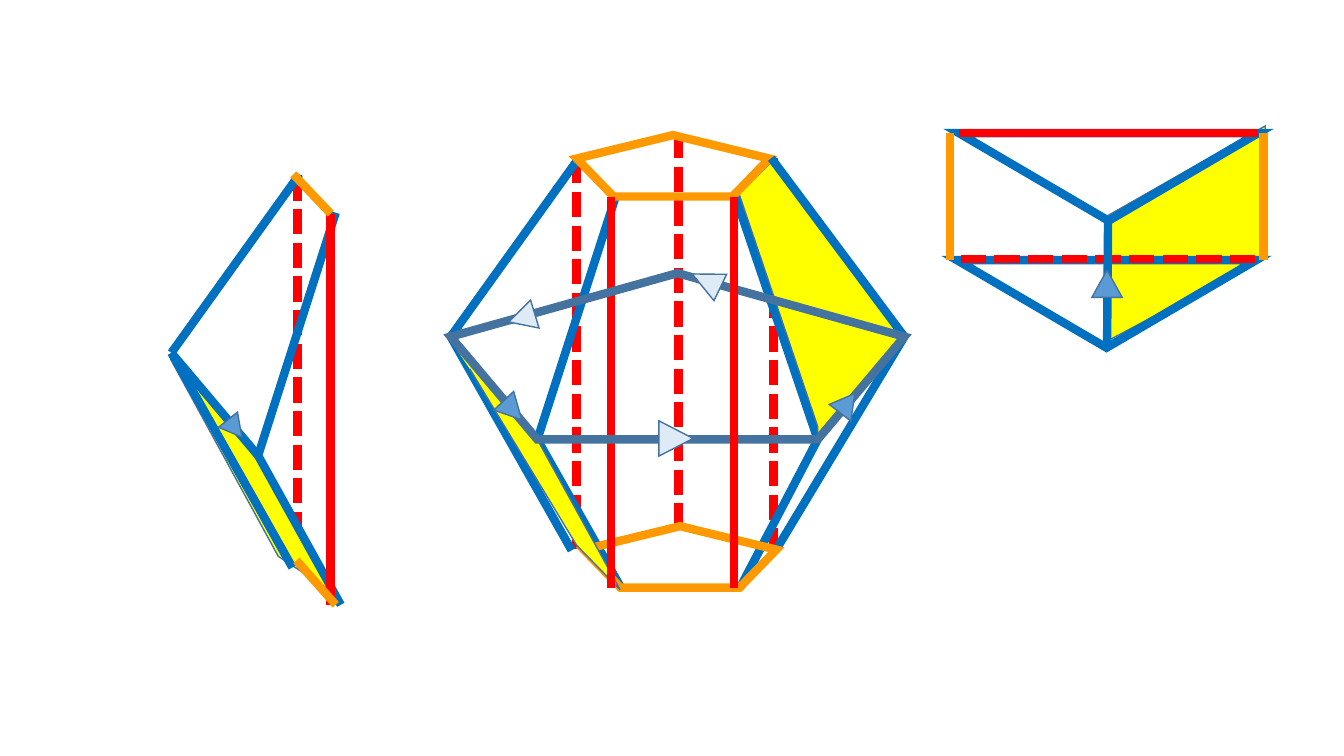
from lxml import etree
from pptx import Presentation
from pptx.dml.color import RGBColor
from pptx.enum.dml import MSO_LINE
from pptx.enum.shapes import MSO_CONNECTOR, MSO_SHAPE
from pptx.oxml.ns import qn
from pptx.util import Inches, Pt

STRAIGHT = MSO_CONNECTOR.STRAIGHT
TRIANGLE = MSO_SHAPE.ISOSCELES_TRIANGLE
PENTAGON = MSO_SHAPE.REGULAR_PENTAGON
DASHED = MSO_LINE.SQUARE_DOT

COLORS = {
    "red": "FF0000", "blue": "0070C0", "orange": "FF9900", "yellow": "FFFF00",
    "steel": "43739E", "front": "5B9BD5", "back": "DEEBF7",
}
EDGE_WIDTH = 6
OUTLINE_WIDTH = 1
POST_HEIGHT = 3.88

# Yellow faces: corner points, closed or open outline
PRISM_FACE = [(10.96, 2.32), (10.97, 3.39), (12.56, 2.55), (12.55, 1.25), (10.97, 2.15)], False
WEDGE_FACE = [(1.69, 3.56), (2.58, 4.51), (3.34, 5.9), (2.76, 5.52)], True
GEM_RIGHT_FACE = [(7.33, 1.92), (8.11, 4.23), (8.11, 4.31), (8.97, 3.3), (7.67, 1.59)], True
GEM_LEFT_FACE = [(4.49, 3.41), (5.34, 4.38), (6.15, 5.85), (5.72, 5.41), (4.66, 3.66)], False

# Posts: left, top
HIDDEN_POSTS = [(7.67, 1.57), (5.72, 1.57), (2.95, 1.74)]
GEM_AXIS = 6.73, 1.32
WEDGE_POST = 3.28, 2.12
GEM_LEFT_POST = 6.06, 1.95
GEM_RIGHT_POST = 7.28, 1.95

# Edges: start x, start y, end x, end y
GEM_FRONT_EDGES = [
    (5.74, 1.57, 4.47, 3.34), (6.11, 1.94, 5.33, 4.36),
    (7.29, 1.94, 8.11, 4.36), (5.33, 4.36, 6.16, 5.83),
]
LOWER_AND_WEDGE_EDGES = [
    (8.11, 4.36, 7.34, 5.83), (8.97, 3.34, 7.7, 5.45), (4.47, 3.34, 5.67, 5.46),
    (2.97, 1.73, 1.7, 3.5), (3.33, 2.11, 2.56, 4.52),
    (2.56, 4.52, 3.38, 6), (1.7, 3.5, 2.9, 5.63),
]
WEDGE_GIRDLE = 1.7, 3.5, 2.56, 4.52
WEDGE_CAPS = [(2.91, 1.73, 3.28, 2.12), (2.94, 5.56, 3.33, 6)]
PRISM_RIGHT = 12.53, 1.32, 12.53, 2.58
PRISM_LEFT = 9.42, 1.32, 9.42, 2.58
PRISM_TOP = 12.48, 1.32, 9.51, 1.32
PRISM_HIDDEN = 12.45, 2.57, 9.48, 2.57
PRISM_RIDGE = 10.99, 2.19, 10.98, 3.46
GEM_RIGHT_EDGE = 7.65, 1.57, 8.97, 3.34

# Outlined shapes: left, top, width, height
PRISM_ENDS = [(9.51, 1.32, 2.97, 0.87), (9.49, 2.58, 2.97, 0.87)]
GEM_TOP = 5.72, 1.34, 1.91, 0.61
GEM_BOTTOM = 5.79, 5.22, 1.91, 0.61
GEM_GIRDLE = 4.47, 2.71, 4.5, 1.65

# Direction markers: box, rotation, fill
MARKERS = [
    ((2.21, 4.14, 0.24, 0.22), 141.3, "front"),
    ((10.83, 2.68, 0.3, 0.27), 0, "front"),
    ((8.27, 3.88, 0.27, 0.24), 37.6, "front"),
    ((4.95, 3.94, 0.27, 0.26), 136.7, "front"),
    ((6.86, 2.63, 0.29, 0.31), 295.7, "back"),
    ((6.53, 4.18, 0.35, 0.34), 90, "back"),
    ((5.03, 3.02, 0.29, 0.27), 253.2, "back"),
]

presentation = Presentation()
presentation.slide_width = Inches(13.33)
presentation.slide_height = Inches(7.5)
slide = presentation.slides.add_slide(presentation.slide_layouts[6])


def rgb(name):
    return RGBColor.from_string(COLORS[name])


def style_line(shape, color, width):
    shape.line.color.rgb = rgb(color)
    shape.line.width = Pt(width)
    line = shape._element.spPr.find(qn("a:ln"))
    etree.SubElement(line, qn("a:miter")).set("lim", "800000")


def style_shape(shape, fill, color, width):
    shape.shadow.inherit = False
    if fill:
        shape.fill.solid()
        shape.fill.fore_color.rgb = rgb(fill)
    else:
        shape.fill.background()
    style_line(shape, color, width)


def add_edge(ends, color, dashed=False):
    edge = slide.shapes.add_connector(STRAIGHT, *map(Inches, ends))
    edge.line.color.rgb = rgb(color)
    edge.line.width = Pt(EDGE_WIDTH)
    if dashed:
        edge.line.dash_style = DASHED
    etree.SubElement(edge._element.spPr, qn("a:effectLst"))


def add_edges(edges, color):
    for ends in edges:
        add_edge(ends, color)


def add_post(top_end, dashed=False):
    left, top = top_end
    add_edge((left, top, left, top + POST_HEIGHT), "red", dashed)


def add_face(face):
    points, closed = face
    corners = [(Inches(x), Inches(y)) for x, y in points]
    builder = slide.shapes.build_freeform(*corners[0])
    builder.add_line_segments(corners[1:], close=closed)
    style_shape(builder.convert_to_shape(), "yellow", "steel", OUTLINE_WIDTH)


def add_preset(kind, box, color, width=EDGE_WIDTH, rotation=0, fill=None):
    shape = slide.shapes.add_shape(kind, *map(Inches, box))
    shape.rotation = rotation
    style_shape(shape, fill, color, width)


# Rear faces and hidden posts
add_face(PRISM_FACE)
for post in HIDDEN_POSTS:
    add_post(post, dashed=True)
add_face(WEDGE_FACE)

# Slanted edges of the gem and the wedge
add_edges(GEM_FRONT_EDGES, "blue")
add_post(GEM_AXIS, dashed=True)
add_edges(LOWER_AND_WEDGE_EDGES, "blue")
add_post(WEDGE_POST)
add_edge(WEDGE_GIRDLE, "blue")
add_edges(WEDGE_CAPS, "orange")

# Prism, with the gem's right face and rim in between
for box in PRISM_ENDS:
    add_preset(TRIANGLE, box, "blue", rotation=180)
add_face(GEM_RIGHT_FACE)
add_edge(PRISM_RIGHT, "orange")
add_edge(PRISM_TOP, "red")
add_edge(PRISM_HIDDEN, "red", dashed=True)
add_edge(PRISM_RIDGE, "blue")
add_preset(PENTAGON, GEM_TOP, "orange")
add_edge(GEM_RIGHT_EDGE, "blue")
add_edge(PRISM_LEFT, "orange")

# Front of the gem
add_preset(PENTAGON, GEM_BOTTOM, "orange")
add_face(GEM_LEFT_FACE)
add_post(GEM_LEFT_POST)
add_preset(PENTAGON, GEM_GIRDLE, "steel")
add_post(GEM_RIGHT_POST)

# Direction markers
for box, rotation, fill in MARKERS:
    add_preset(TRIANGLE, box, "steel", OUTLINE_WIDTH, rotation, fill)

presentation.save("out.pptx")
